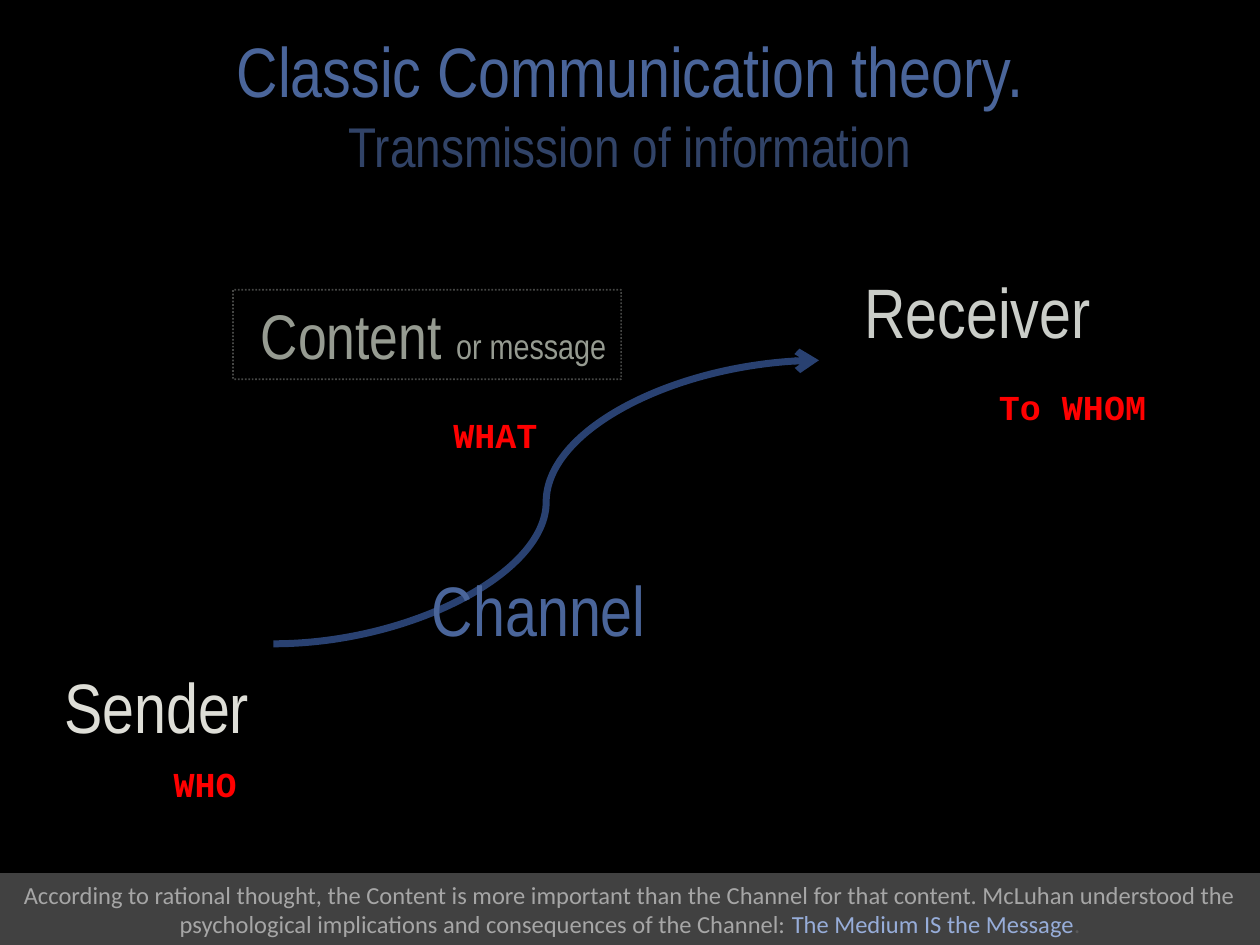
from dataclasses import dataclass

from pptx import Presentation
from pptx.dml.color import RGBColor
from pptx.enum.dml import MSO_LINE
from pptx.enum.shapes import MSO_CONNECTOR, MSO_SHAPE
from pptx.enum.text import MSO_ANCHOR, PP_ALIGN
from pptx.oxml.ns import qn
from pptx.oxml.xmlchemy import OxmlElement
from pptx.shapes.autoshape import Shape
from pptx.slide import Slide
from pptx.text.text import TextFrame
from pptx.util import Inches, Pt

RECTANGLE = MSO_SHAPE.RECTANGLE
CURVE = MSO_CONNECTOR.CURVE
DOTTED = MSO_LINE.ROUND_DOT
CENTER = PP_ALIGN.CENTER
TOP = MSO_ANCHOR.TOP
MIDDLE = MSO_ANCHOR.MIDDLE

BLACK = RGBColor(0x00, 0x00, 0x00)
RED = RGBColor(0xFF, 0x00, 0x00)
BLUE = RGBColor(0x4A, 0x65, 0x9A)
DARK_BLUE = RGBColor(0x31, 0x43, 0x67)
ARROW_BLUE = RGBColor(0x29, 0x41, 0x71)
LIGHT_BLUE = RGBColor(0x97, 0xAD, 0xD9)
IVORY = RGBColor(0xDE, 0xDE, 0xD7)
SILVER = RGBColor(0xCA, 0xCD, 0xC8)
SAGE = RGBColor(0x96, 0x9B, 0x91)
BAND_GRAY = RGBColor(0xD9, 0xD9, 0xD9)
NOTE_GRAY = RGBColor(0xA6, 0xA6, 0xA6)
DARK_GRAY = RGBColor(0x59, 0x59, 0x59)

HEADING_FONT = "Arial Narrow"
QUESTION_FONT = "Courier New"
NOTE_FONT = "Calibri"


@dataclass(frozen=True)
class Span:
    text: str
    size: float
    color: RGBColor


@dataclass(frozen=True)
class Box:
    left: float
    top: float
    width: float
    height: float

    def lengths(self) -> tuple:
        return tuple(Inches(value) for value in (self.left, self.top, self.width, self.height))


@dataclass(frozen=True)
class Label:
    span: Span
    box: Box
    font: str = HEADING_FONT
    bold: bool = False


def question(text: str, box: Box) -> Label:
    return Label(Span(text, 20, RED), box, QUESTION_FONT, True)


LABELS = [
    Label(Span("Sender", 40, IVORY), Box(0.41, 5.22, 1.69, 0.77)),
    Label(Span("Receiver", 40, SILVER), Box(6.76, 2.08, 2.02, 0.77)),
    Label(Span("Channel", 40, BLUE), Box(3.33, 4.45, 1.92, 0.77)),
    question("WHO", Box(1.28, 6, 0.89, 0.44)),
    question("To WHOM", Box(7.83, 3.01, 1.53, 0.44)),
    question("WHAT", Box(3.5, 3.23, 1.04, 0.44)),
]
TITLE_LINES = [
    [Span("Classic Communication theory.", 40, BLUE)],
    [Span("Transmission of information", 32, DARK_BLUE)],
]
CONTENT = [Span("Content ", 36, SAGE), Span("or message", 20, SAGE)]
NOTE = [
    Span(
        "According to rational thought, the Content is more important than the Channel "
        "for that content. McLuhan understood the psychological implications and "
        "consequences of the Channel: ",
        14,
        NOTE_GRAY,
    ),
    Span("The Medium IS the Message", 14, LIGHT_BLUE),
    Span(".", 14, DARK_GRAY),
]


def write_lines(frame: TextFrame, lines: list[list[Span]], font: str) -> None:
    for index, spans in enumerate(lines):
        paragraph = frame.add_paragraph() if index else frame.paragraphs[0]
        paragraph.alignment = CENTER
        paragraph.font.name = font
        for span in spans:
            run = paragraph.add_run()
            run.text = span.text
            run.font.size = Pt(span.size)
            run.font.color.rgb = span.color


def set_opacity(shape: Shape, percent: int) -> None:
    color = shape._element.spPr.find(".//" + qn("a:srgbClr"))
    alpha = OxmlElement("a:alpha")
    alpha.set("val", str(percent * 1000))
    color.append(alpha)


def add_title(slide: Slide) -> None:
    title = slide.shapes.title
    title.left, title.top, title.width, title.height = Box(0, 0.17, 10, 1.31).lengths()
    title.text_frame.vertical_anchor = TOP
    write_lines(title.text_frame, TITLE_LINES, HEADING_FONT)


def add_label(slide: Slide, label: Label) -> None:
    frame = slide.shapes.add_textbox(*label.box.lengths()).text_frame
    frame.word_wrap = False
    paragraph = frame.paragraphs[0]
    paragraph.text = label.span.text
    paragraph.font.name = label.font
    paragraph.font.size = Pt(label.span.size)
    paragraph.font.bold = label.bold
    paragraph.font.color.rgb = label.span.color


def add_rectangle(slide: Slide, box: Box, spans: list[Span], font: str) -> Shape:
    shape = slide.shapes.add_shape(RECTANGLE, *box.lengths())
    shape.shadow.inherit = False
    shape.text_frame.vertical_anchor = MIDDLE
    shape.text_frame.word_wrap = True
    write_lines(shape.text_frame, [spans], font)
    return shape


def add_content_box(slide: Slide) -> None:
    shape = add_rectangle(slide, Box(1.85, 2.3, 3.08, 0.71), CONTENT, HEADING_FONT)
    shape.fill.background()
    shape.line.color.rgb = SILVER
    shape.line.width = Pt(1)
    shape.line.dash_style = DOTTED
    set_opacity(shape, 34)
    shape.text_frame.word_wrap = False
    shape.text_frame.margin_left = Inches(0.2)


def add_note_band(slide: Slide) -> None:
    shape = add_rectangle(slide, Box(0, 6.93, 10, 0.57), NOTE, NOTE_FONT)
    shape.fill.solid()
    shape.fill.fore_color.rgb = BAND_GRAY
    set_opacity(shape, 30)
    shape.line.fill.background()


def add_channel_arrow(slide: Slide) -> None:
    arrow = slide.shapes.add_connector(
        CURVE, Inches(2.17), Inches(5.11), Inches(6.5), Inches(2.86)
    )
    arrow.line.color.rgb = ARROW_BLUE
    arrow.line.width = Pt(4)
    head = OxmlElement("a:tailEnd")
    head.set("type", "arrow")
    arrow.line._get_or_add_ln().append(head)
    arrow._element.spPr.append(OxmlElement("a:effectLst"))


def main() -> None:
    presentation = Presentation()
    presentation.slide_width = Inches(10)
    presentation.slide_height = Inches(7.5)
    slide = presentation.slides.add_slide(presentation.slide_layouts[5])
    slide.background.fill.solid()
    slide.background.fill.fore_color.rgb = BLACK
    add_title(slide)
    add_channel_arrow(slide)
    for label in LABELS:
        add_label(slide, label)
    add_content_box(slide)
    add_note_band(slide)
    presentation.save("out.pptx")


if __name__ == "__main__":
    main()
